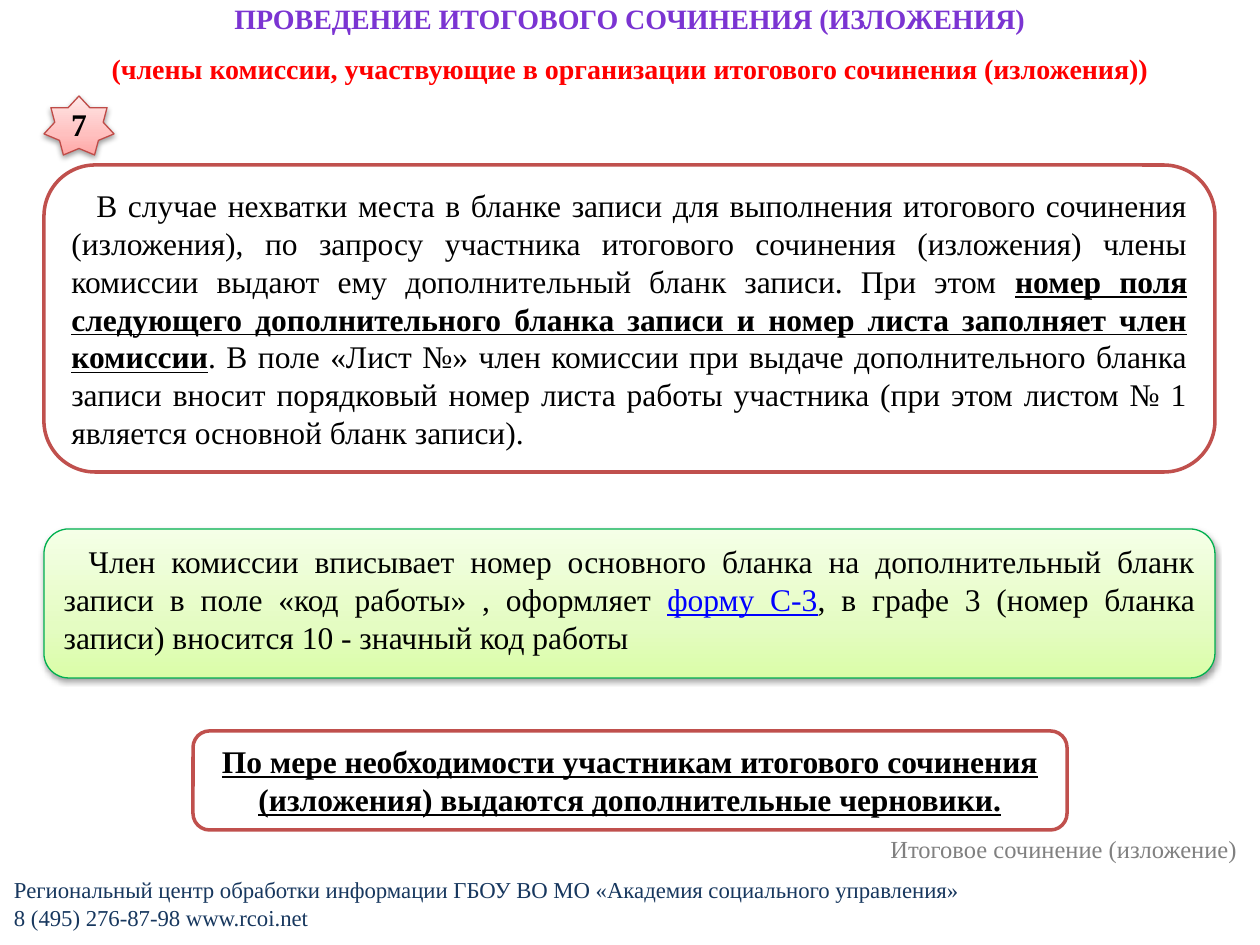
from lxml import etree
from pptx import Presentation
from pptx import util as u
from pptx.dml.color import RGBColor
from pptx.enum import shapes, text
from pptx.oxml.ns import qn

PX = 914400 / 126
FONT = "Times New Roman"
COLORS = {
    "white": "FFFFFF", "black": "000000", "purple": "7B34D2", "red": "FF0000",
    "frame": "C0504D", "star": "BF4C48", "green": "00B050", "link": "0000FF",
    "navy": "17375E", "gray": "808080",
}
GRADIENTS = {
    "pink": [(0, "FFA6A5"), (35, "FFC0BF"), (100, "FFE7E7")],
    "lime": [(0, "DAFDA7"), (35, "E4FCC2"), (100, "F5FFE7")],
}


def px(n):
    return u.Emu(round(n * PX))


def rgb(name):
    return RGBColor.from_string(COLORS[name])


def place(sp, left, top, width, height):
    sp.left, sp.top, sp.width, sp.height = map(px, (left, top, width, height))


def write(sp, runs, size, align=text.PP_ALIGN.LEFT, indent=0):
    """Fill one paragraph with (text, colour, bold, underline) runs."""
    tf = sp.text_frame
    tf.word_wrap = True
    tf.auto_size = text.MSO_AUTO_SIZE.NONE
    p = tf.paragraphs[0]
    p.alignment = align
    if indent:
        pPr = p._p.get_or_add_pPr()
        pPr.set("marL", "0")
        pPr.set("indent", str(px(indent)))
    for words, color, bold, underline in runs:
        r = p.add_run()
        r.text = words
        r.font.name, r.font.size = FONT, u.Pt(size)
        r.font.bold, r.font.underline = bold, underline
        r.font.color.rgb = rgb(color)
    return p


def add_box(s, kind, box, line, width):
    sp = s.shapes.add_shape(kind, *map(px, box))
    sp.shadow.inherit = False
    sp.fill.solid()
    sp.fill.fore_color.rgb = rgb("white")
    sp.line.color.rgb = rgb(line)
    sp.line.width = u.Pt(width)
    sp.text_frame.vertical_anchor = text.MSO_ANCHOR.TOP
    return sp


def add_glow(sp, gradient):
    """Give a shape an upward gradient and a soft shadow below."""
    spPr = sp._element.spPr
    grad = etree.Element(qn("a:gradFill"), rotWithShape="1")
    stops = etree.SubElement(grad, qn("a:gsLst"))
    for pos, color in GRADIENTS[gradient]:
        gs = etree.SubElement(stops, qn("a:gs"), pos=str(pos * 1000))
        etree.SubElement(gs, qn("a:srgbClr"), val=color)
    etree.SubElement(grad, qn("a:lin"), ang="16200000", scaled="1")
    spPr.replace(spPr.find(qn("a:solidFill")), grad)
    shadow = etree.SubElement(
        spPr.find(qn("a:effectLst")), qn("a:outerShdw"), blurRad="40000",
        dist="20000", dir="5400000", rotWithShape="0")
    color = etree.SubElement(shadow, qn("a:srgbClr"), val=COLORS["black"])
    etree.SubElement(color, qn("a:alpha"), val="38000")


def add_label(s, box, words, size, color):
    sp = s.shapes.add_textbox(*map(px, box))
    p = write(sp, [], size)
    p.text = words
    p.font.name, p.font.size = FONT, u.Pt(size)
    p.font.color.rgb = rgb(color)
    return sp


def add_title(s):
    title = s.shapes.title
    place(title, 63, -9, 1134, 88)
    title.text_frame.vertical_anchor = text.MSO_ANCHOR.MIDDLE
    p = write(title, [
        ("ПРОВЕДЕНИЕ ИТОГОВОГО СОЧИНЕНИЯ (ИЗЛОЖЕНИЯ)", "purple", True, False),
    ], 16, text.PP_ALIGN.CENTER)
    p.add_line_break()
    write(title, [
        ("(члены комиссии, участвующие в организации итогового сочинения "
         "(изложения))", "red", True, False),
    ], 16, text.PP_ALIGN.CENTER)
    p.line_spacing = 1.5


def main():
    prs = Presentation()
    prs.slide_width, prs.slide_height = u.Inches(10), u.Inches(7.5)
    s = prs.slides.add_slide(prs.slide_layouts[5])
    rounded = shapes.MSO_SHAPE.ROUNDED_RECTANGLE
    center, justify = text.PP_ALIGN.CENTER, text.PP_ALIGN.JUSTIFY

    # Footer
    footer = add_label(
        s, (0, 869, 1085, 69),
        "Региональный центр обработки информации ГБОУ ВО МО «Академия "
        "социального управления» \n8 (495) 276-87-98 www.rcoi.net", 13, "navy")
    footer.text_frame.margin_left = footer.text_frame.margin_right = px(14)
    footer.text_frame.margin_top = footer.text_frame.margin_bottom = px(7)
    add_label(s, (878, 828, 377, 43), "Итоговое сочинение (изложение)",
              14, "gray")

    # Title
    add_title(s)

    # Shortage of space
    sp = add_box(s, rounded, (44, 165, 1171, 307), "frame", 2)
    write(sp, [
        ("В случае нехватки места в бланке записи для выполнения итогового "
         "сочинения (изложения), по запросу участника итогового сочинения "
         "(изложения) члены комиссии выдают ему дополнительный бланк записи. "
         "При этом ", "black", False, False),
        ("номер поля следующего дополнительного бланка записи и номер листа "
         "заполняет член комиссии", "black", True, True),
        (". В поле «Лист №» член комиссии при выдаче дополнительного бланка "
         "записи вносит порядковый номер листа работы участника (при этом "
         "листом № 1 является основной бланк записи). ",
         "black", False, False),
    ], 18, justify, 25)

    # Drafts
    sp = add_box(s, rounded, (193, 731, 874, 99), "frame", 2)
    write(sp, [
        ("По мере необходимости участникам итогового сочинения (изложения) "
         "выдаются дополнительные черновики.", "black", True, True),
    ], 18, center)

    # Step number
    sp = add_box(s, shapes.MSO_SHAPE.STAR_7_POINT, (44, 96, 70, 59),
                 "star", 0.75)
    add_glow(sp, "pink")
    sp.text_frame.vertical_anchor = text.MSO_ANCHOR.MIDDLE
    write(sp, [("7", "black", True, False)], 18, center)
    sp.text_frame.word_wrap = False

    # Form to fill in
    sp = add_box(s, rounded, (44, 529, 1171, 149), "green", 0.75)
    add_glow(sp, "lime")
    write(sp, [
        ("Член комиссии вписывает номер основного бланка на дополнительный "
         "бланк записи в поле «код работы» , оформляет ",
         "black", False, False),
        ("форму С-3", "link", False, True),
        (", в графе 3 (номер бланка записи) вносится 10 - значный код работы",
         "black", False, False),
    ], 18, justify, 25)

    prs.save("out.pptx")


if __name__ == "__main__":
    main()
